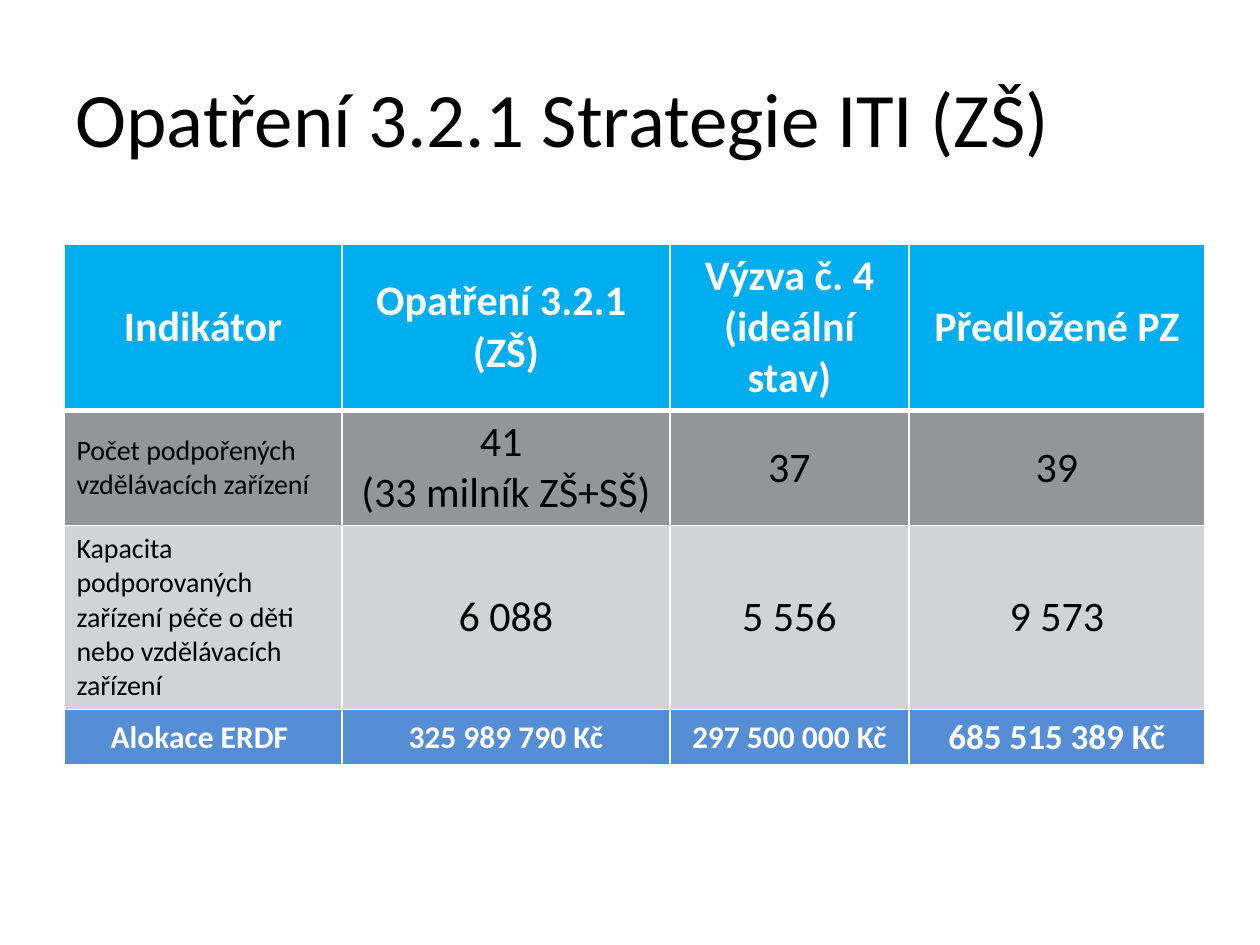
from dataclasses import dataclass

from lxml import etree
from pptx import Presentation
from pptx.dml.color import RGBColor
from pptx.enum.text import MSO_ANCHOR, PP_ALIGN
from pptx.oxml.ns import qn
from pptx.util import Pt

LEFT, CENTER = PP_ALIGN.LEFT, PP_ALIGN.CENTER
MIDDLE = MSO_ANCHOR.MIDDLE
FONT = "Calibri"
DPI = 126
COLORS = {
    "white": "FFFFFF", "black": "000000", "cyan": "00AEEF",
    "dark": "939598", "light": "D1D3D4", "blue": "558ED5",
}


@dataclass
class Row:
    height: int
    fill: str
    ink: str
    bold: bool
    sizes: tuple[int, ...]
    texts: tuple[str, ...]
    aligns: tuple[PP_ALIGN, ...] = (CENTER,) * 4
    tight: tuple[int, ...] = ()  # columns without cell margins
    base: int = 1  # bottom border in points


BODY = {"sizes": (16, 24, 24, 24), "aligns": (LEFT, CENTER, CENTER, CENTER), "tight": (2, 3)}
WIDTHS = (278, 328, 239, 296)
ROWS = (
    Row(165, "cyan", "white", True, (24,) * 4,
        ("Indikátor", "Opatření 3.2.1 \n(ZŠ)", "Výzva č. 4\n(ideální stav)", "Předložené PZ"),
        base=3),
    Row(115, "dark", "black", False,
        texts=("Počet podpořených vzdělávacích zařízení", "41 \n(33 milník ZŠ+SŠ)", "37", "39"),
        **BODY),
    Row(184, "light", "black", False,
        texts=("Kapacita podporovaných zařízení péče o děti nebo vzdělávacích zařízení",
               "6 088", "5 556", "9 573"),
        **BODY),
    Row(54, "blue", "white", True, (18, 18, 18, 20),
        ("Alokace ERDF ", "325 989 790 Kč", "297 500 000 Kč", "685 515 389 Kč")),
)


def px(count: int) -> int:
    return round(count * 914400 / DPI)


def write(frame, text: str, size: int, ink: str, bold: bool, align: PP_ALIGN) -> None:
    frame.text = text
    for para in frame.paragraphs:
        para.alignment = align
        font = para.font
        font.name, font.size, font.bold = FONT, Pt(size), bold
        font.color.rgb = RGBColor.from_string(COLORS[ink])


def edge(cell, side: str, width: int) -> None:
    """Draw one white cell border."""
    props = cell._tc.get_or_add_tcPr()
    line = etree.SubElement(props, qn(f"a:ln{side}"), w=str(Pt(width)))
    fill = etree.SubElement(line, qn("a:solidFill"))
    etree.SubElement(fill, qn("a:srgbClr"), val=COLORS["white"])


def fill_row(table, index: int, row: Row) -> None:
    table.rows[index].height = px(row.height)
    top = ROWS[index - 1].base if index else 1
    for col, text in enumerate(row.texts):
        cell = table.cell(index, col)
        write(cell.text_frame, text, row.sizes[col], row.ink, row.bold, row.aligns[col])
        cell.vertical_anchor = MIDDLE
        if col in row.tight:
            cell.margin_left = cell.margin_right = 0
            cell.margin_top = cell.margin_bottom = 0
        for side, width in (("L", 1), ("R", 1), ("T", top), ("B", row.base)):
            edge(cell, side, width)
        cell.fill.solid()
        cell.fill.fore_color.rgb = RGBColor.from_string(COLORS[row.fill])


def main() -> None:
    deck = Presentation()
    deck.slide_width, deck.slide_height = px(1260), px(945)
    slide = deck.slides.add_slide(deck.slide_layouts[5])

    title = slide.shapes.title
    title.left, title.top, title.width, title.height = map(px, (63, 38, 1134, 158))
    write(title.text_frame, "Opatření 3.2.1 Strategie ITI (ZŠ)", 44, "black", False, LEFT)
    title.text_frame.vertical_anchor = MIDDLE

    high = sum(row.height for row in ROWS)
    box = (64, 244, sum(WIDTHS), high)
    table = slide.shapes.add_table(len(ROWS), len(WIDTHS), *map(px, box)).table
    table.horz_banding = False
    for col, width in zip(table.columns, WIDTHS):
        col.width = px(width)
    for index, row in enumerate(ROWS):
        fill_row(table, index, row)

    deck.save("out.pptx")


if __name__ == "__main__":
    main()
